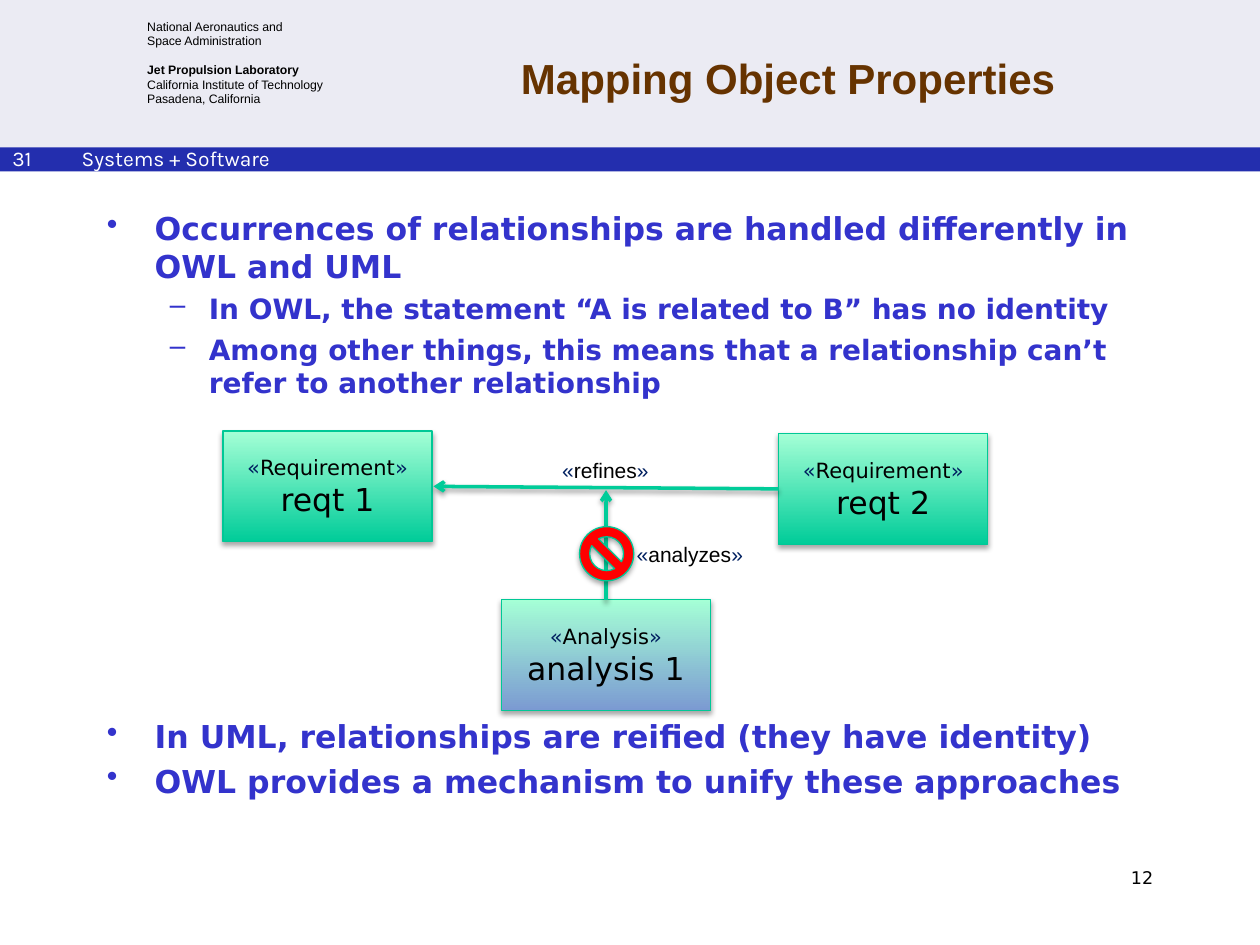
import pptx
import pptx.util
import pptx.dml.color
import pptx.enum.shapes
import pptx.enum.text
import pptx.oxml
import pptx.oxml.ns
from dataclasses import dataclass
from lxml import etree

Inches, Pt = pptx.util.Inches, pptx.util.Pt
SHAPE = pptx.enum.shapes.MSO_SHAPE
ALIGN = pptx.enum.text.PP_ALIGN
MIDDLE = pptx.enum.text.MSO_ANCHOR.MIDDLE

COLORS = {
    "band": "EBEBF3", "bar": "232EAE", "title": "663300", "body": "3333CC",
    "black": "000000", "white": "FFFFFF", "navy": "002060", "green": "00CC99",
    "mint": "A5FFD6", "blue": "7B9AD2", "edge": "00C896", "red": "FF0000",
}
SANS, ARIAL, KARLA = "DejaVu Sans", "Arial", "Karla"


@dataclass
class Node:
    left: float
    top: float
    kind: str
    name: str
    base: str


@dataclass
class Link:
    start: tuple
    end: tuple


@dataclass
class Label:
    left: float
    top: float
    width: float
    text: str


@dataclass
class Item:
    text: str
    level: int = 0


@dataclass
class Level:
    mark: str
    size: int
    left: float
    hang: float


LEVELS = [Level("•", 18, 0.38, 0.38), Level("–", 16, 0.81, 0.31)]


def rgb(key: str):
    return pptx.dml.color.RGBColor.from_string(COLORS[key])


def style(font, name: str, size: float, color: str, bold: bool = False) -> None:
    font.name, font.size, font.bold = name, Pt(size), bold
    font.color.rgb = rgb(color)


def add_box(slide, left, top, width, height, wrap=True):
    box = slide.shapes.add_textbox(Inches(left), Inches(top), Inches(width), Inches(height))
    box.text_frame.word_wrap = wrap
    return box.text_frame


def add_line(slide, place, text, name, size, color, bold=False, align=ALIGN.LEFT, wrap=True):
    frame = add_box(slide, *place, wrap=wrap)
    frame.text = text
    para = frame.paragraphs[0]
    para.alignment = align
    style(para.runs[0].font, name, size, color, bold)
    return frame


def add_shape(slide, kind, left, top, width, height):
    shape = slide.shapes.add_shape(kind, Inches(left), Inches(top), Inches(width), Inches(height))
    shape.shadow.inherit = False
    return shape


def add_band(slide, top: float, height: float, color: str) -> None:
    band = add_shape(slide, SHAPE.RECTANGLE, 0, top, 10, height)
    band.fill.solid()
    band.fill.fore_color.rgb = rgb(color)
    band.line.fill.background()


def add_shade(shape, alpha: int) -> None:
    """Soft shadow straight below the shape."""
    props = shape._element.spPr
    effects = props.find(pptx.oxml.ns.qn("a:effectLst"))
    if effects is None:
        effects = etree.SubElement(props, pptx.oxml.ns.qn("a:effectLst"))
    effects.append(pptx.oxml.parse_xml(
        f'<a:outerShdw {pptx.oxml.ns.nsdecls("a")} blurRad="{Pt(3.1)}" dist="{Pt(1.8)}" '
        f'dir="5400000" rotWithShape="0"><a:srgbClr val="{COLORS["black"]}">'
        f'<a:alpha val="{alpha * 1000}"/></a:srgbClr></a:outerShdw>'))


def add_edge(shape) -> None:
    shape.line.color.rgb = rgb("edge")
    shape.line.width = Pt(0.75)
    add_shade(shape, 35)


def add_stereo(para, word: str, name: str) -> None:
    """Word between guillemets."""
    for text, color in (("«", "navy"), (word, "black"), ("»", "navy")):
        run = para.add_run()
        run.text = text
        style(run.font, name, 12, color)


def draw_node(slide, node: Node) -> None:
    shape = add_shape(slide, SHAPE.RECTANGLE, node.left, node.top, 1.66, 0.88)
    shape.fill.gradient()
    shape.fill.gradient_angle = 90
    for stop, color in zip(shape.fill.gradient_stops, (node.base, "mint")):
        stop.color.rgb = rgb(color)
    add_edge(shape)
    shape.text_frame.vertical_anchor = MIDDLE
    para = shape.text_frame.paragraphs[0]
    para.alignment = ALIGN.CENTER
    add_stereo(para, node.kind, SANS)
    para.add_line_break()
    run = para.add_run()
    run.text = node.name
    style(run.font, SANS, 18, "black")


def draw_link(slide, link: Link) -> None:
    line = slide.shapes.add_connector(
        pptx.enum.shapes.MSO_CONNECTOR.STRAIGHT,
        *(Inches(value) for value in link.start + link.end))
    line.line.color.rgb = rgb("green")
    line.line.width = Pt(2)
    etree.SubElement(line.line._get_or_add_ln(), pptx.oxml.ns.qn("a:tailEnd"), type="arrow")
    add_shade(line, 38)


def draw_label(slide, label: Label) -> None:
    para = add_box(slide, label.left, label.top, label.width, 0.3, wrap=False).paragraphs[0]
    para.alignment = ALIGN.CENTER
    add_stereo(para, label.text, ARIAL)


def draw_list(slide, top: float, height: float, items: list) -> None:
    frame = add_box(slide, 0.75, top, 8.5, height)
    for index, item in enumerate(items):
        para = frame.add_paragraph() if index else frame.paragraphs[0]
        para.text = item.text
        level = LEVELS[item.level]
        para.level = item.level
        props = para._p.get_or_add_pPr()
        props.set("marL", str(Inches(level.left)))
        props.set("indent", str(-Inches(level.hang)))
        etree.SubElement(props, pptx.oxml.ns.qn("a:buChar"), char=level.mark)
        if index:
            para.space_before = Pt(4)
        style(para.runs[0].font, SANS, level.size, "body", True)


def draw_head(slide) -> None:
    add_band(slide, 0, 1.36, "band")
    frame = add_box(slide, 1.07, 0.1, 1.62, 0.8, wrap=False)
    frame.text = ("National Aeronautics and\vSpace Administration\nJet Propulsion Laboratory\n"
                  "California Institute of Technology\nPasadena, California")
    for index, para in enumerate(frame.paragraphs):
        for run in para.runs:
            style(run.font, ARIAL, 7, "black", index == 1)
    frame.paragraphs[1].space_before = Pt(8)
    add_band(slide, 1.17, 0.19, "bar")
    add_line(slide, (0, 1.11, 0.41, 0.3), "31", KARLA, 12, "white", wrap=False)
    add_line(slide, (0.55, 1.11, 2.91, 0.3), "Systems + Software", KARLA, 12, "white")
    title = add_line(slide, (2.64, 0.17, 7.23, 0.89), "Mapping Object Properties",
                     ARIAL, 24, "title", True, ALIGN.CENTER)
    title.vertical_anchor = MIDDLE


def main() -> None:
    deck = pptx.Presentation()
    deck.slide_width, deck.slide_height = Inches(10), Inches(7.5)
    slide = deck.slides.add_slide(deck.slide_layouts[6])
    draw_head(slide)

    # Bullets above and below the diagram
    draw_list(slide, 1.61, 1.7, [
        Item("Occurrences of relationships are handled differently in OWL and UML"),
        Item("In OWL, the statement “A is related to B” has no identity", 1),
        Item("Among other things, this means that a relationship can’t "
             "refer to another relationship", 1)])
    draw_list(slide, 5.64, 0.8, [
        Item("In UML, relationships are reified (they have identity)"),
        Item("OWL provides a mechanism to unify these approaches")])
    add_line(slide, (7.17, 6.83, 2.08, 0.5), "12", SANS, 10, "black", align=ALIGN.RIGHT)

    # Diagram
    for node in (Node(1.77, 3.42, "Requirement", "reqt 1", "green"),
                 Node(6.18, 3.44, "Requirement", "reqt 2", "green"),
                 Node(3.98, 4.76, "Analysis", "analysis 1", "blue")):
        draw_node(slide, node)
    for link in (Link((6.18, 3.88), (3.44, 3.86)), Link((4.81, 4.76), (4.81, 3.89))):
        draw_link(slide, link)
    for label in (Label(4.36, 3.58, 0.89, "refines"), Label(4.95, 4.25, 1.05, "analyzes")):
        draw_label(slide, label)

    # Forbidden mark
    ban = add_shape(slide, SHAPE.NO_SYMBOL, 4.6, 4.18, 0.43, 0.43)
    ban.fill.solid()
    ban.fill.fore_color.rgb = rgb("red")
    add_edge(ban)
    deck.save("out.pptx")


if __name__ == "__main__":
    main()
